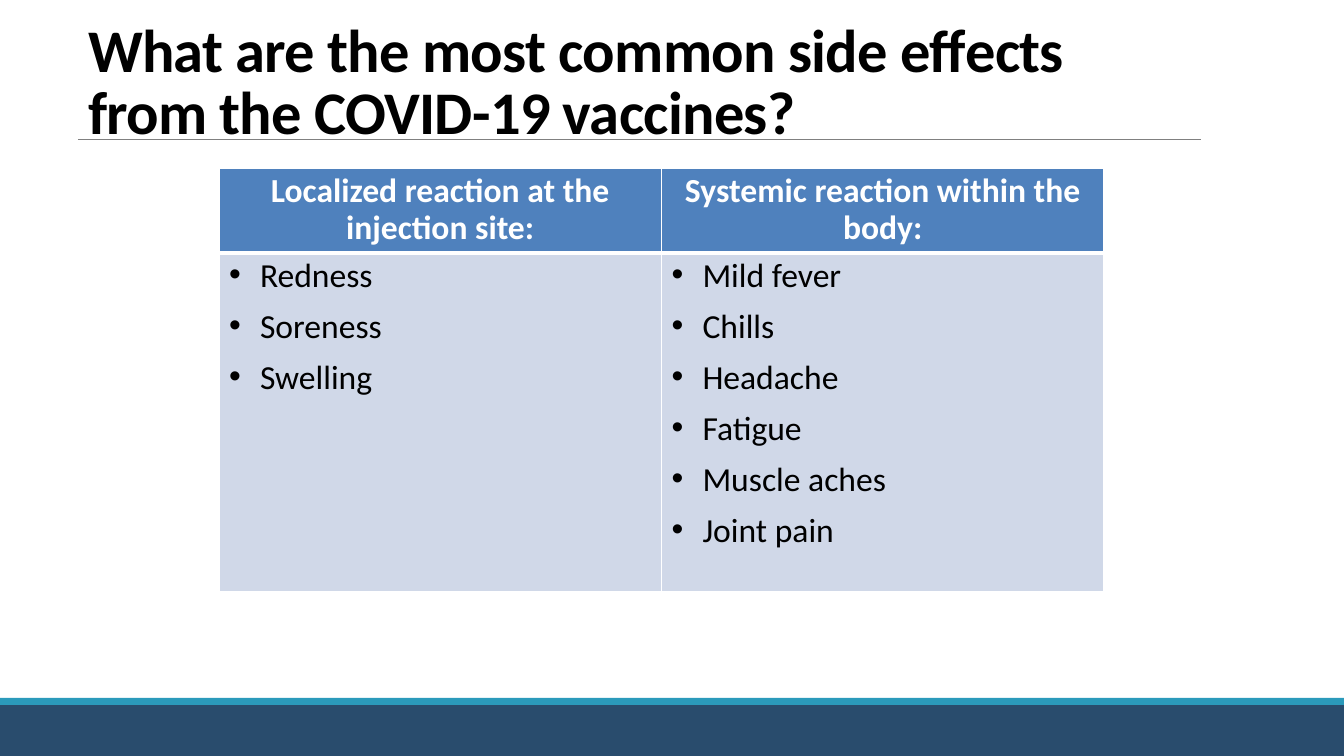
from dataclasses import dataclass

from lxml import etree
from pptx import Presentation
from pptx.dml.color import RGBColor
from pptx.enum.shapes import MSO_CONNECTOR, MSO_SHAPE
from pptx.enum.text import MSO_ANCHOR, MSO_AUTO_SIZE, PP_ALIGN
from pptx.oxml.ns import qn
from pptx.util import Emu, Pt

RECTANGLE = MSO_SHAPE.RECTANGLE
STRAIGHT = MSO_CONNECTOR.STRAIGHT
BOTTOM = MSO_ANCHOR.BOTTOM
NO_AUTOFIT = MSO_AUTO_SIZE.NONE
LEFT, CENTER = PP_ALIGN.LEFT, PP_ALIGN.CENTER

EMU_PER_PX = 914400 / 100.8
SLIDE_W, SLIDE_H = 1344, 756
TITLE_ONLY_LAYOUT = 5
BULLET_INDENT = 31

TITLE = "What are the most common side effects from the COVID-19 vaccines?"
REACTIONS = {
    "Localized reaction at the injection site:": ["Redness", "Soreness", "Swelling"],
    "Systemic reaction within the body:": [
        "Mild fever", "Chills", "Headache", "Fatigue", "Muscle aches", "Joint pain",
    ],
}


@dataclass(frozen=True)
class Theme:
    font: str = "Calibri"
    title_size: float = 43.2
    table_size: float = 24
    text: str = "000000"
    light: str = "FFFFFF"
    header: str = "4F81BD"
    body: str = "D0D8E8"
    footer: str = "294C6D"
    accent: str = "2B9ABB"
    rule: str = "808080"


THEME = Theme()


def px(length):
    return Emu(round(length * EMU_PER_PX))


def rgb(color):
    return RGBColor.from_string(color)


def style_paragraph(paragraph, size, color, bold, align, line_spacing):
    paragraph.alignment = align
    paragraph.line_spacing = line_spacing
    font = paragraph.font
    font.name = THEME.font
    font.size = Pt(size)
    font.bold = bold
    font.color.rgb = rgb(color)


def add_band(slide, top, height, color):
    band = slide.shapes.add_shape(RECTANGLE, 0, px(top), px(SLIDE_W), px(height))
    band.shadow.inherit = False
    band.fill.solid()
    band.fill.fore_color.rgb = rgb(color)
    band.line.fill.background()


def add_rule(slide, left, right, y):
    rule = slide.shapes.add_connector(STRAIGHT, px(left), px(y), px(right), px(y))
    rule.line.color.rgb = rgb(THEME.rule)
    rule.line.width = Pt(0.5)
    etree.SubElement(rule._element.spPr, qn("a:effectLst"))


def set_title(slide):
    title = slide.shapes.title
    title.left, title.top, title.width, title.height = px(78), px(68), px(1109), px(84)
    frame = title.text_frame
    frame.text = TITLE
    frame.word_wrap = True
    frame.auto_size = NO_AUTOFIT
    frame.vertical_anchor = BOTTOM
    paragraph = frame.paragraphs[0]
    style_paragraph(paragraph, THEME.title_size, THEME.text, True, LEFT, 0.85)
    paragraph._p.pPr.find(qn("a:defRPr")).set("spc", "-50")


def add_bullet(paragraph):
    properties = paragraph._p.get_or_add_pPr()
    properties.set("marL", str(px(BULLET_INDENT)))
    properties.set("indent", str(-px(BULLET_INDENT)))
    etree.SubElement(properties, qn("a:buFont"), typeface="Arial")
    etree.SubElement(properties, qn("a:buChar"), char="•")


def set_borders(cell, top, bottom):
    """Draw all four cell edges; top and bottom are widths in points."""
    properties = cell._tc.get_or_add_tcPr()
    for side, width in (("L", 1), ("R", 1), ("T", top), ("B", bottom)):
        edge = etree.SubElement(properties, qn(f"a:ln{side}"), w=str(Pt(width)))
        fill = etree.SubElement(edge, qn("a:solidFill"))
        etree.SubElement(fill, qn("a:srgbClr"), val=THEME.light)


def fill_cell(cell, color):
    cell.fill.solid()
    cell.fill.fore_color.rgb = rgb(color)


def fill_header(cell, heading):
    set_borders(cell, top=1, bottom=3)
    fill_cell(cell, THEME.header)
    cell.text = heading
    style_paragraph(cell.text_frame.paragraphs[0], THEME.table_size, THEME.light,
                    True, CENTER, 0.9)


def fill_list(cell, symptoms):
    set_borders(cell, top=3, bottom=1)
    fill_cell(cell, THEME.body)
    cell.text = "\n".join(symptoms)
    for index, paragraph in enumerate(cell.text_frame.paragraphs):
        add_bullet(paragraph)
        style_paragraph(paragraph, THEME.table_size, THEME.text, False, LEFT, 0.9)
        if index:
            paragraph.space_before = Pt(10)


def add_reaction_table(slide):
    frame = slide.shapes.add_table(2, len(REACTIONS), px(219), px(168), px(885), px(424))
    table = frame.table
    table.horz_banding = False
    table.rows[0].height, table.rows[1].height = px(85), px(339)
    for column, (heading, symptoms) in enumerate(REACTIONS.items()):
        fill_header(table.cell(0, column), heading)
        fill_list(table.cell(1, column), symptoms)


def main():
    presentation = Presentation()
    presentation.slide_width, presentation.slide_height = px(SLIDE_W), px(SLIDE_H)
    slide = presentation.slides.add_slide(presentation.slide_layouts[TITLE_ONLY_LAYOUT])
    add_band(slide, 705, 51, THEME.footer)
    add_band(slide, 698, 7, THEME.accent)
    add_rule(slide, 78, 1201, 139)
    set_title(slide)
    add_reaction_table(slide)
    presentation.save("out.pptx")


if __name__ == "__main__":
    main()
